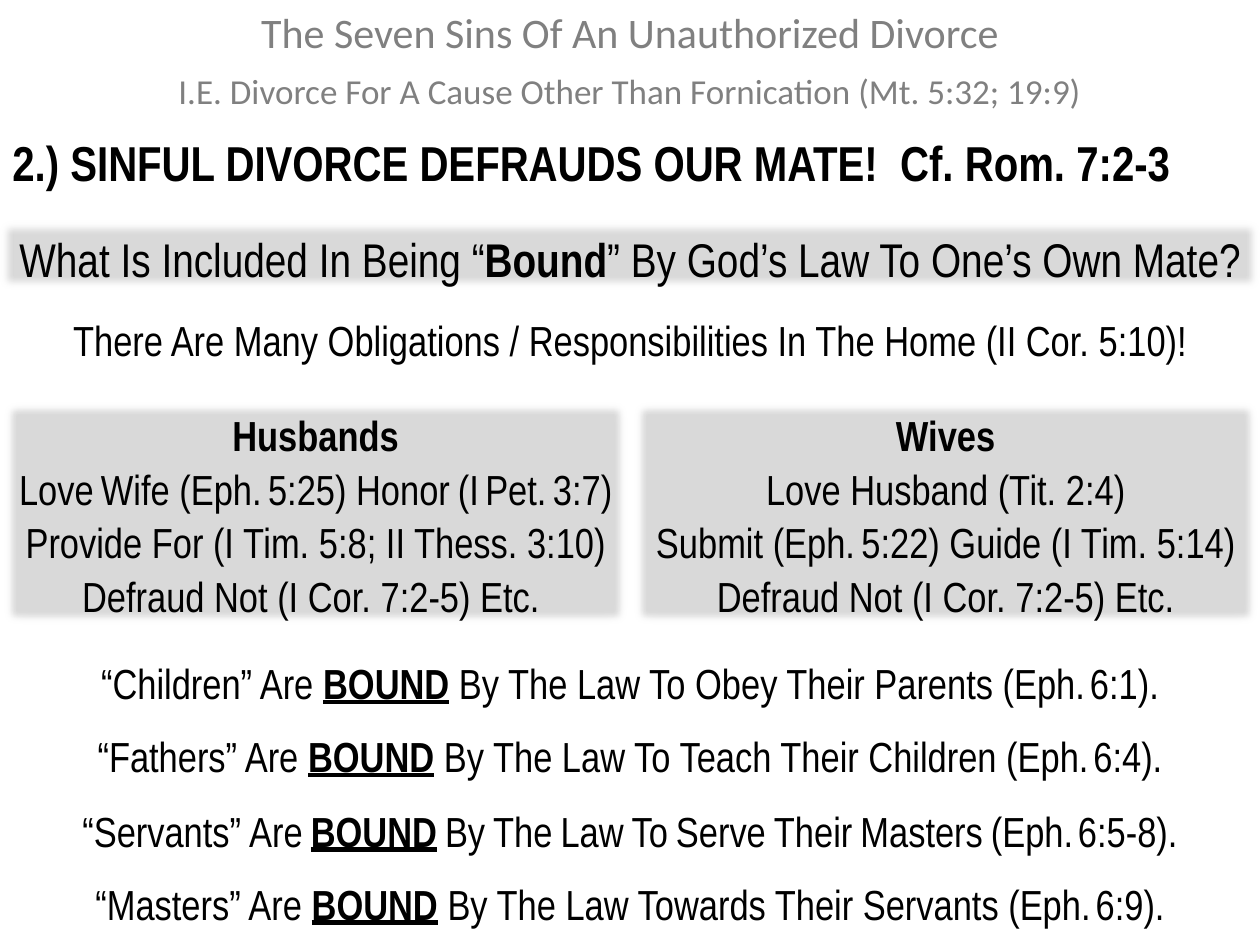
from dataclasses import dataclass
from itertools import groupby

from lxml.etree import SubElement
from pptx import Presentation
from pptx.dml.color import RGBColor
from pptx.enum.shapes import MSO_SHAPE
from pptx.enum.text import MSO_ANCHOR, MSO_AUTO_SIZE, PP_ALIGN
from pptx.oxml.ns import qn
from pptx.util import Pt

SCALE = 9144
WIDE, HIGH = 1000, 750
EDGE = 63500
COLORS = {"ink": "000000", "mute": "808080", "panel": "D9D9D9"}
GAPS = {"~": 12, "^": 16, "¦": 18, "_": 20}
FRAME = {
    "word_wrap": True,
    "auto_size": MSO_AUTO_SIZE.SHAPE_TO_FIT_TEXT,
    "vertical_anchor": MSO_ANCHOR.TOP,
}
LOOSE = {"line_spacing": 1.07, "space_after": Pt(8)}


@dataclass
class Block:
    text: str
    top: int
    high: int
    left: int = 0
    wide: int = WIDE
    size: int = 24
    face: str = "Arial Narrow"
    color: str = "ink"
    align: PP_ALIGN = PP_ALIGN.CENTER
    loose: bool = False
    panel: bool = False


def apply(target: object, values: dict) -> None:
    for name, value in values.items():
        setattr(target, name, value)


def add_run(para, text: str, size: int, block: Block, bold: bool, under: bool) -> None:
    run = para.add_run()
    run.text = text
    apply(run.font, {"size": Pt(size), "name": block.face, "bold": bold, "underline": under})
    run.font.color.rgb = RGBColor.from_string(COLORS[block.color])


def fill_text(para, block: Block) -> None:
    for row, line in enumerate(block.text.split("\n")):
        if row:
            para.add_line_break()
        for turn, part in enumerate(line.split("*")):
            bold = turn % 2 == 1
            under = bold and part == "BOUND"
            for mark, chars in groupby(part, lambda c: c if c in GAPS else ""):
                text = " " if mark else "".join(chars)
                add_run(para, text, GAPS.get(mark, block.size), block, bold, under)


def add_block(slide, block: Block) -> None:
    area = [n * SCALE for n in (block.left, block.top, block.wide, block.high)]
    if block.panel:
        shape = slide.shapes.add_shape(MSO_SHAPE.RECTANGLE, *area)
        shape.shadow.inherit = False
        shape.fill.solid()
        shape.fill.fore_color.rgb = RGBColor.from_string(COLORS["panel"])
        shape.line.fill.background()
        effects = shape.element.spPr.find(qn("a:effectLst"))
        SubElement(effects, qn("a:softEdge"), rad=str(EDGE))
    else:
        shape = slide.shapes.add_textbox(*area)
    apply(shape.text_frame, FRAME)
    para = shape.text_frame.paragraphs[0]
    apply(para, {"alignment": block.align, **(LOOSE if block.loose else {})})
    fill_text(para, block)


HEADS = [
    Block("*2.) SINFUL DIVORCE DEFRAUDS OUR MATE!  Cf. Rom. 7:2-3*", 100, 57,
          size=28, align=PP_ALIGN.LEFT),
    Block("The Seven Sins Of An Unauthorized Divorce", 0, 50, face="Calibri", color="mute"),
    Block("I.E. Divorce For A Cause Other Than Fornication (Mt. 5:32; 19:9)", 50, 44,
          size=20, face="Calibri", color="mute"),
    Block("What Is Included In Being “*Bound*” By God’s Law To One’s Own Mate?", 175, 55,
          size=27, loose=True, panel=True),
    Block("There Are Many Obligations / Responsibilities In The Home (II Cor. 5:10)!", 242, 50,
          loose=True),
]
MATES = [
    "*Husbands*\nLove¦Wife (Eph.^5:25) Honor_(I^Pet.^3:7) "
    "Provide For (I Tim. 5:8; II Thess. 3:10)\nDefraud Not (I Cor. 7:2-5) Etc. ",
    "*Wives*\nLove Husband (Tit. 2:4)\nSubmit (Eph.^5:22) Guide (I Tim. 5:14)\n"
    "Defraud Not (I Cor. 7:2-5) Etc.",
]
DUTIES = [
    "“Children” Are *BOUND* By The Law To Obey Their Parents (Eph.~6:1).",
    "“Fathers” Are *BOUND* By The Law To Teach Their Children (Eph.~6:4).",
    "“Servants”_Are_*BOUND*_By_The_Law_To_Serve_Their_Masters_(Eph.~6:5-8).",
    "“Masters” Are *BOUND* By The Law Towards Their Servants (Eph.~6:9).",
]


def main() -> None:
    deck = Presentation()
    apply(deck, {"slide_width": WIDE * SCALE, "slide_height": HIGH * SCALE})
    slide = deck.slides.add_slide(deck.slide_layouts[6])
    mates = [Block(text, 317, 180, left=1 + 500 * col, wide=499, loose=True, panel=True)
             for col, text in enumerate(MATES)]
    duties = [Block(text, 517 + round(58.3 * row), 50) for row, text in enumerate(DUTIES)]
    for block in HEADS + mates + duties:
        add_block(slide, block)
    deck.save("out.pptx")


if __name__ == "__main__":
    main()
